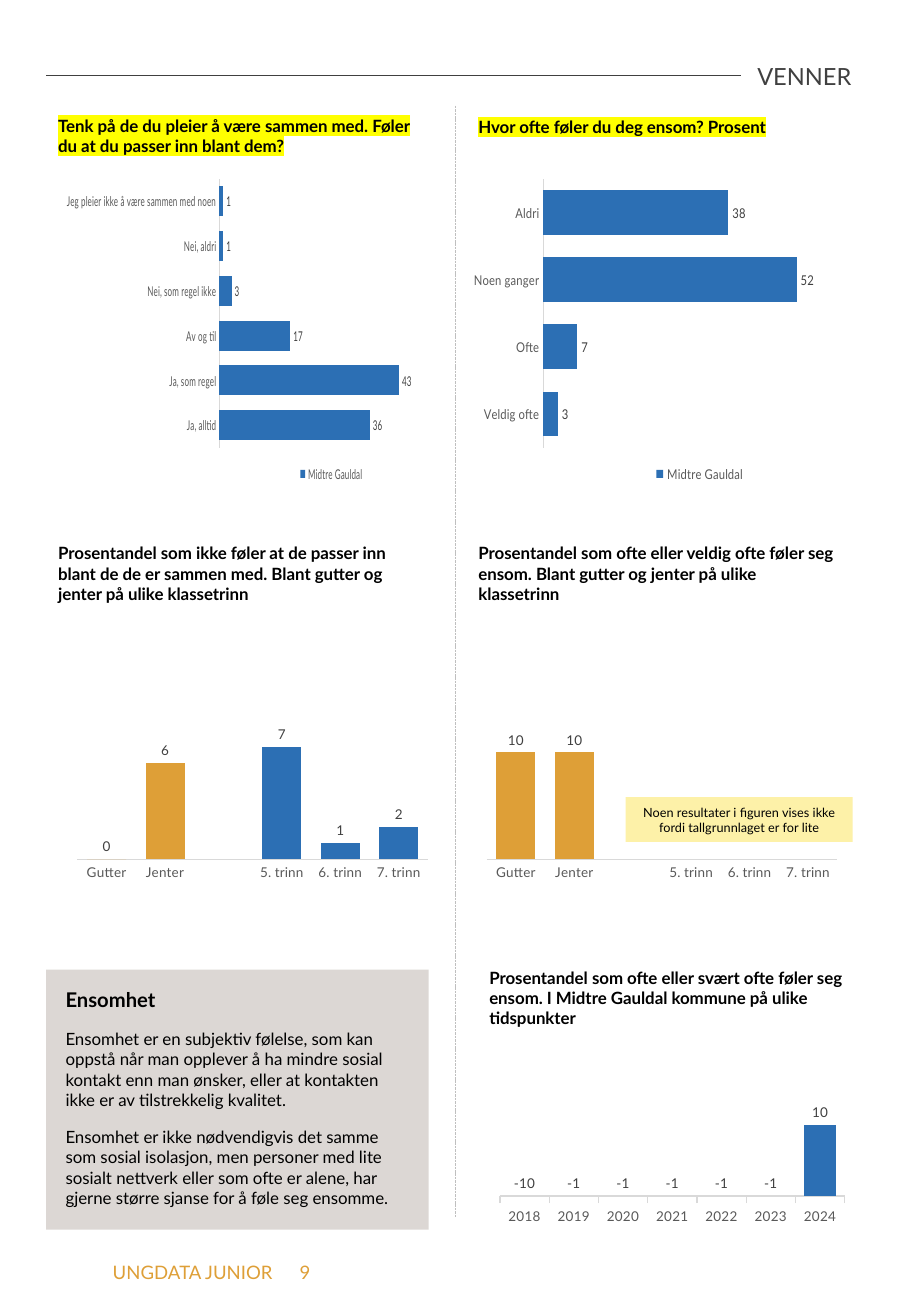
from pptx import Presentation
from pptx.chart.data import CategoryChartData
from pptx.dml.color import RGBColor
from pptx.enum import chart as chart_enums, dml, shapes, text
from pptx.oxml import parse_xml
from pptx.oxml.ns import nsdecls, qn
from pptx.util import Inches, Pt

FONT = "Lato"
BLACK = RGBColor(0x00, 0x00, 0x00)
DARK_GREY = RGBColor(0x40, 0x40, 0x40)
AXIS_TEXT = RGBColor(0x59, 0x59, 0x59)
AXIS_LINE = RGBColor(0xD9, 0xD9, 0xD9)
DIVIDER = RGBColor(0xBF, 0xBF, 0xBF)
BLUE = RGBColor(0x2C, 0x6F, 0xB4)
ORANGE = RGBColor(0xDE, 0x9F, 0x37)
TAUPE = RGBColor(0xA8, 0x9D, 0x94)
PALE_YELLOW = RGBColor(0xFD, 0xF1, 0xA8)
BAR = chart_enums.XL_CHART_TYPE.BAR_CLUSTERED
COLUMN = chart_enums.XL_CHART_TYPE.COLUMN_CLUSTERED


def style_font(font, size, color, bold=False):
    font.name = FONT
    font.size = Pt(size)
    font.color.rgb = color
    font.bold = bold


def add_survey_chart(kind, box, plot, name, categories, values, maximum):
    """Add a one-series chart; plot is the inner plot area as fractions of the box."""
    data = CategoryChartData(number_format="0")
    data.categories = categories
    data.add_series(name, values)
    chart = slide.shapes.add_chart(kind, *map(Inches, box), data).chart
    chart.has_title = False
    style_font(chart.font, 8, BLACK)

    category_axis, value_axis = chart.category_axis, chart.value_axis
    category_axis.major_tick_mark = chart_enums.XL_TICK_MARK.NONE
    category_axis.has_major_gridlines = False
    category_axis.format.line.color.rgb = AXIS_LINE
    category_axis.format.line.width = Pt(0.75)
    style_font(category_axis.tick_labels.font, 8, AXIS_TEXT)
    value_axis.visible = False
    value_axis.has_major_gridlines = False
    value_axis.minimum_scale = 0
    value_axis.maximum_scale = maximum

    bars = chart.plots[0]
    bars.gap_width = 50
    bars.vary_by_categories = False
    series = bars.series[0]
    series.invert_if_negative = False
    series.format.fill.solid()
    series.format.fill.fore_color.rgb = BLUE
    bars.has_data_labels = True
    labels = bars.data_labels
    labels.show_value = True
    labels.number_format = "0"
    labels.number_format_is_linked = False
    labels.position = chart_enums.XL_LABEL_POSITION.OUTSIDE_END
    style_font(labels.font, 8, DARK_GREY)

    chart.has_legend = kind == BAR
    plot_area = chart.element.chart.plotArea
    for old_layout in plot_area.findall(qn("c:layout")):
        plot_area.remove(old_layout)
    layouts = [(plot_area, 0, '<c:layoutTarget val="inner"/>', plot)]
    if kind == BAR:
        chart.legend.position = chart_enums.XL_LEGEND_POSITION.TOP
        chart.legend.include_in_layout = False
        style_font(chart.legend.font, 8, AXIS_TEXT)
        legend = chart.element.chart.find(qn("c:legend"))
        for old_layout in legend.findall(qn("c:layout")):
            legend.remove(old_layout)
        layouts.append((legend, 1, "", (0.35, 0.93, 0.4, 0.07)))
    else:
        bars.overlap = -10
    for parent, index, target, (x, y, w, h) in layouts:
        parent.insert(index, parse_xml(
            f'<c:layout {nsdecls("c")}><c:manualLayout>{target}'
            '<c:xMode val="edge"/><c:yMode val="edge"/>'
            f'<c:x val="{x}"/><c:y val="{y}"/><c:w val="{w}"/><c:h val="{h}"/>'
            '</c:manualLayout></c:layout>'))
    chart.element.chart.addnext(parse_xml(
        f'<c:spPr {nsdecls("c", "a")}><a:noFill/><a:ln><a:noFill/></a:ln></c:spPr>'))
    return chart


presentation = Presentation()
presentation.slide_width = Inches(7.5)
presentation.slide_height = Inches(10.83)
slide = presentation.slides.add_slide(presentation.slide_layouts[6])

# Rules
for start, end, color, width, dash in [
    ((3.75, 0.87), (3.75, 10.02), DIVIDER, 0.5, dml.MSO_LINE.SQUARE_DOT),
    ((0.38, 0.62), (6.1, 0.62), DARK_GREY, 0.3, dml.MSO_LINE.SOLID),
]:
    rule = slide.shapes.add_connector(
        shapes.MSO_CONNECTOR.STRAIGHT, *map(Inches, start + end))
    rule.line.color.rgb = color
    rule.line.width = Pt(width)
    rule.line.dash_style = dash
    rule._element.spPr.append(parse_xml(f'<a:effectLst {nsdecls("a")}/>'))

# Page header, chart headings and footer
for box, wording, size, color, bold, highlighted in [
    ((0.38, 0.46, 6.73, 0.34), "VENNER", 14, DARK_GREY, False, False),
    ((0.38, 0.9, 3.15, 0.44), "Tenk på de du pleier å være sammen med. Føler du at du "
     "passer inn blant dem?", 10, BLACK, True, True),
    ((3.84, 0.91, 3.29, 0.27), "Hvor ofte føler du deg ensom? Prosent",
     10, BLACK, True, True),
    ((0.38, 4.42, 3.15, 0.61), "Prosentandel som ikke føler at de passer inn blant de de "
     "er sammen med. Blant gutter og jenter på ulike klassetrinn", 10, BLACK, True, False),
    ((3.84, 4.42, 3.15, 0.61), "Prosentandel som ofte eller veldig ofte føler seg ensom. "
     "Blant gutter og jenter på ulike klassetrinn", 10, BLACK, True, False),
    ((3.93, 7.91, 3.34, 0.61), "Prosentandel som ofte eller svært ofte føler seg ensom. "
     "I Midtre Gauldal kommune på ulike tidspunkter", 10, BLACK, True, False),
    ((0.33, 10.33, 7.17, 0.29), "\tUNGDATA JUNIOR\t 9", 11, ORANGE, False, False),
]:
    frame = slide.shapes.add_textbox(*map(Inches, box)).text_frame
    frame.word_wrap = True
    frame.auto_size = text.MSO_AUTO_SIZE.SHAPE_TO_FIT_TEXT
    frame.text = wording
    paragraph = frame.paragraphs[0]
    run = paragraph.runs[0]
    style_font(run.font, size, color, bold)
    if wording == "VENNER":
        paragraph.alignment = text.PP_ALIGN.RIGHT
    if wording.startswith("\t"):
        paragraph._p.get_or_add_pPr().append(parse_xml(
            f'<a:tabLst {nsdecls("a")}><a:tab pos="{Inches(0.5)}" algn="l"/>'
            f'<a:tab pos="{Inches(2)}" algn="l"/></a:tabLst>'))
    if highlighted:
        run._r.rPr.find(qn("a:latin")).addprevious(parse_xml(
            f'<a:highlight {nsdecls("a")}><a:srgbClr val="FFFF00"/></a:highlight>'))

# Answer distributions
BAR_PLOT = (0.428, 0.073, 0.969, 0.802)
add_survey_chart(
    BAR, (0.55, 1.27, 2.98, 2.76), BAR_PLOT, "Midtre Gauldal",
    ["Ja, alltid", "Ja, som regel", "Av og til", "Nei, som regel ikke", "Nei, aldri",
     "Jeg pleier ikke å være sammen med noen"], [36, 43, 17, 3, 1, 1], 50)
lonely_chart = add_survey_chart(
    BAR, (3.9, 1.27, 2.98, 2.76), BAR_PLOT, "Midtre Gauldal",
    ["Aldri", "Noen ganger", "Ofte", "Veldig ofte"], [38, 52, 7, 3], 60)
lonely_chart.category_axis.reverse_order = True

# Gender and grade
for left, values, maximum in [
    (0.56, [0, 6, None, 7, 1, 2], 8),
    (3.93, [10, 10, None, None, None, None], 12),
]:
    group_chart = add_survey_chart(
        COLUMN, (left, 5.57, 2.98, 1.77), (0.026, 0.253, 0.969, 0.595), "Prosent",
        ["Gutter", "Jenter", "", "5. trinn", "6. trinn", "7. trinn"], values, maximum)
    for gender in range(2):
        fill = group_chart.plots[0].series[0].points[gender].format.fill
        fill.solid()
        fill.fore_color.rgb = ORANGE

# Trend over the years
trend_chart = add_survey_chart(
    COLUMN, (4.04, 8.47, 2.93, 1.62), (0.026, 0.416, 0.969, 0.432), "Prosent",
    [str(year) for year in range(2018, 2025)], [-10, -1, -1, -1, -1, -1, 10], 12)
trend_chart.category_axis.major_tick_mark = chart_enums.XL_TICK_MARK.OUTSIDE

# Fact box and note
for box, color, inset, anchor, align, paragraphs in [
    ((0.38, 7.98, 3.15, 2.14), TAUPE, 0.16, text.MSO_ANCHOR.TOP, text.PP_ALIGN.LEFT, [
        ("Ensomhet", 12, True),
        ("Ensomhet er en subjektiv følelse, som kan oppstå når man opplever å ha mindre "
         "sosial kontakt enn man ønsker, eller at kontakten ikke er av tilstrekkelig "
         "kvalitet.", 10, False),
        ("Ensomhet er ikke nødvendigvis det samme som sosial isolasjon, men personer med "
         "lite sosialt nettverk eller som ofte er alene, har gjerne større sjanse for å "
         "føle seg ensomme.", 10, False)]),
    ((5.15, 6.56, 1.87, 0.37), PALE_YELLOW, 0.05, text.MSO_ANCHOR.MIDDLE,
     text.PP_ALIGN.CENTER, [
        ("Noen resultater i figuren vises ikke fordi tallgrunnlaget er for lite", 7.5, False)]),
]:
    panel = slide.shapes.add_shape(shapes.MSO_SHAPE.RECTANGLE, *map(Inches, box))
    panel.shadow.inherit = False
    panel.line.fill.background()
    panel.fill.solid()
    panel.fill.fore_color.rgb = color
    if color == TAUPE:
        panel._element.spPr.find(".//" + qn("a:srgbClr")).append(
            parse_xml(f'<a:alpha {nsdecls("a")} val="40000"/>'))
    frame = panel.text_frame
    frame.word_wrap = True
    frame.vertical_anchor = anchor
    frame.margin_left = frame.margin_right = Inches(max(inset, 0.1))
    frame.margin_top = frame.margin_bottom = Inches(inset)
    frame.text = "\n".join(wording for wording, _, _ in paragraphs)
    for index, (_, size, bold) in enumerate(paragraphs):
        paragraph = frame.paragraphs[index]
        paragraph.alignment = align
        style_font(paragraph.runs[0].font, size, BLACK, bold)
        if len(paragraphs) > 1:
            paragraph.space_before = Pt(6 if index else 0)
            paragraph.space_after = Pt(4)
            if bold:
                paragraph.line_spacing = Pt(13.5)

presentation.save("out.pptx")
